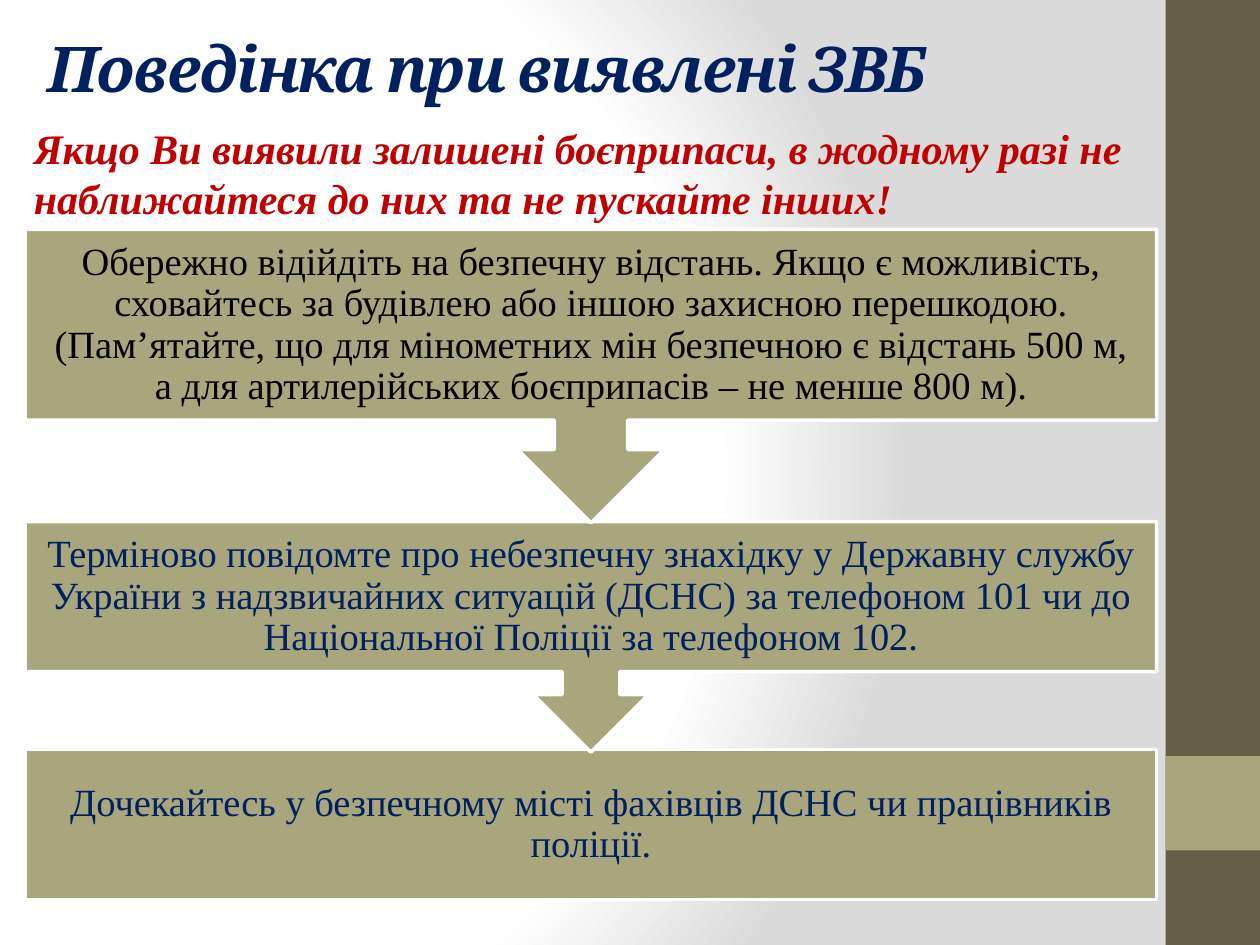
from lxml import etree
from pptx import Presentation
from pptx.dml.color import RGBColor
from pptx.enum.shapes import MSO_SHAPE
from pptx.enum.text import MSO_ANCHOR, PP_ALIGN
from pptx.oxml import parse_xml
from pptx.util import Inches, Pt

RECT = MSO_SHAPE.RECTANGLE
CALL = MSO_SHAPE.UP_ARROW_CALLOUT
MIDDLE = MSO_ANCHOR.MIDDLE
TOP = MSO_ANCHOR.TOP
CENTER = PP_ALIGN.CENTER
LEFT = PP_ALIGN.LEFT
DARK, SAND, NAVY, RED = "675E47", "A9A57C", "002060", "C00000"
WHITE, GRAY, BLACK = "FFFFFF", "DADADA", "000000"
SERIF = "Times New Roman"
NS_A = "http://schemas.openxmlformats.org/drawingml/2006/main"
NS_P = "http://schemas.openxmlformats.org/presentationml/2006/main"

STEPS = [
    (1.82, 2.33, 1.52, BLACK,
     "Обережно відійдіть на безпечну відстань. Якщо є можливість, "
     "сховайтесь за будівлею або іншою захисною перешкодою. "
     "(Пам’ятайте, що для мінометних мін безпечною є відстань 500 м, "
     "а для артилерійських боєприпасів – не менше 800 м)."),
    (4.14, 1.83, 1.19, NAVY,
     "Терміново повідомте про небезпечну знахідку у Державну службу "
     "України з надзвичайних ситуацій (ДСНС) за телефоном 101 чи до "
     "Національної Поліції за телефоном 102."),
    (5.95, 1.19, 1.19, NAVY,
     "Дочекайтесь у безпечному місті фахівців ДСНС чи працівників "
     "поліції."),
]


def color(code):
    return RGBColor.from_string(code)


def add_box(slide, kind, box, fill, line=None):
    shape = slide.shapes.add_shape(kind, *map(Inches, box))
    shape.shadow.inherit = False
    shape.fill.solid()
    shape.fill.fore_color.rgb = color(fill)
    if line:
        shape.line.color.rgb = color(line)
        shape.line.width = Pt(2)
    else:
        shape.line.fill.background()
    return shape


def add_text(slide, box, text, size, ink, font=SERIF, strong=False,
             anchor=TOP, align=LEFT):
    frame = slide.shapes.add_textbox(*map(Inches, box)).text_frame
    frame.word_wrap = True
    frame.vertical_anchor = anchor
    frame.text = text
    para = frame.paragraphs[0]
    para.alignment = align
    run = para.runs[0]
    run.font.size = Pt(size)
    run.font.name = font
    run.font.color.rgb = color(ink)
    run.font.bold = run.font.italic = strong
    return frame


def add_back(slide):
    back = parse_xml(
        f'<p:bg xmlns:p="{NS_P}" xmlns:a="{NS_A}"><p:bgPr>'
        '<a:gradFill rotWithShape="1"><a:gsLst/><a:path path="circle">'
        '<a:fillToRect l="20000" t="50000" r="100000" b="50000"/></a:path>'
        '</a:gradFill><a:effectLst/></p:bgPr></p:bg>')
    stops = back.find(f".//{{{NS_A}}}gsLst")
    for pos, code in ((0, WHITE), (75, WHITE), (100, GRAY)):
        stop = etree.SubElement(stops, f"{{{NS_A}}}gs", pos=str(pos * 1000))
        etree.SubElement(stop, f"{{{NS_A}}}srgbClr", val=code)
    slide.element.cSld.insert(0, back)


def add_band(slide, left, top, width, height):
    add_box(slide, RECT, (left, top, width, height), DARK)
    add_box(slide, RECT, (left, top + 6, width, width), SAND)


def add_head(slide, left, top, width, height):
    add_text(slide, (left, top + 0.89, width, 0.91),
             "Якщо Ви виявили залишені боєприпаси, в жодному разі не "
             "наближайтеся до них та не пускайте інших!",
             24, RED, strong=True)
    title = add_text(slide, (left + 0.11, top, 8.33, height),
                     "Поведінка при виявлені ЗВБ", 36, NAVY, "Cambria",
                     True, MIDDLE)
    title.paragraphs[0].runs[0].font._element.set("spc", "-100")


def add_steps(slide, left, width):
    for top, height, body, ink, text in reversed(STEPS):
        kind = CALL if height > body else RECT
        shape = add_box(slide, kind, (left, top, width, height), SAND, WHITE)
        if kind == CALL:
            shape.rotation = 180
        frame = add_text(slide, (left, top, width, body), text, 22, ink,
                         anchor=MIDDLE, align=CENTER)
        frame.margin_left = frame.margin_right = Inches(0.17)
        frame.margin_top = frame.margin_bottom = Inches(0.17)
        frame.paragraphs[0].line_spacing = 0.9


def main():
    deck = Presentation()
    deck.slide_width = Inches(10)
    deck.slide_height = Inches(7.5)
    slide = deck.slides.add_slide(deck.slide_layouts[6])
    add_back(slide)
    add_band(slide, 9.25, 0, 0.75, 7.5)
    add_head(slide, 0.17, 0.03, 8.98, 1.01)
    add_steps(slide, 0.2, 8.98)
    deck.save("out.pptx")


if __name__ == "__main__":
    main()
